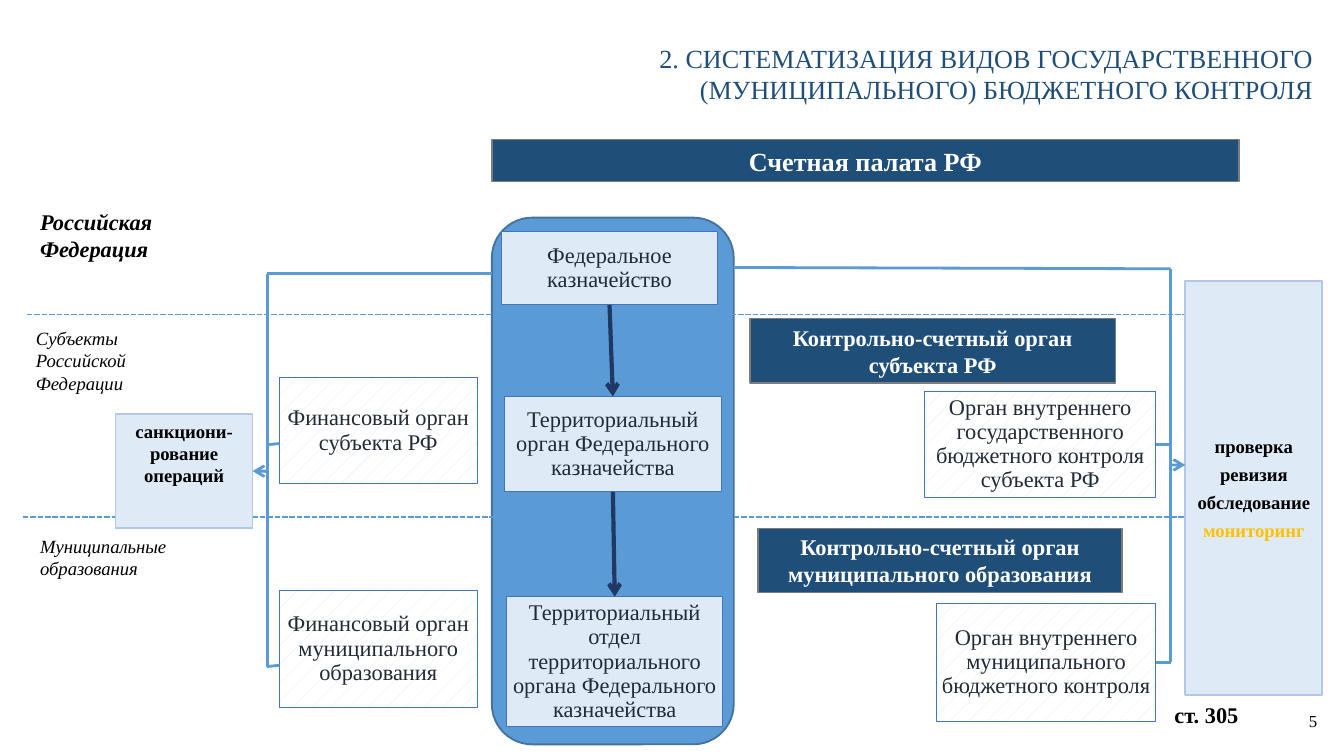
"""Build the slide on the kinds of state and municipal budget control."""
from pptx import Presentation
from pptx import util as u
from pptx.dml import color
from pptx.enum import dml, shapes, text
from pptx.oxml import ns
from lxml import etree

FONT = "Times New Roman"
NAVY, BLUE, PALE, DARK = "1F4E79", "5B9BD5", "DEEBF7", "203864"
TOP, LEFT, BOTTOM, RIGHT = 0, 1, 2, 3


def rgb(value):
    """Turn a hex string into a colour."""
    return color.RGBColor.from_string(value)


def write(sp, content, size=12, ink="000000", bold=False, italic=False, align="LEFT",
          anchor="TOP", inset=(7.2, 3.6), spacing=None, before=0, grow=False, accents=()):
    """Fill a shape with paragraphs, one per line of content."""
    tf = sp.text_frame
    tf.word_wrap = True
    tf.auto_size = getattr(text.MSO_AUTO_SIZE, "SHAPE_TO_FIT_TEXT" if grow else "NONE")
    tf.vertical_anchor = getattr(text.MSO_ANCHOR, anchor)
    tf.margin_left = tf.margin_right = u.Pt(inset[0])
    tf.margin_top = tf.margin_bottom = u.Pt(inset[1])
    for i, line in enumerate(content.split("\n")):
        p = tf.add_paragraph() if i else tf.paragraphs[0]
        p.alignment = getattr(text.PP_ALIGN, align)
        if spacing:
            p.line_spacing = spacing
        if i and before:
            p.space_before = u.Pt(before)
        r = p.add_run()
        r.text = line
        r.font.name, r.font.size = FONT, u.Pt(size)
        r.font.bold, r.font.italic = bold, italic
        r.font.color.rgb = rgb(dict(accents).get(line, ink))


def label(s, at, content, **fmt):
    """Add a text box."""
    write(s.shapes.add_textbox(*map(u.Pt, at)), content, **fmt)


def block(s, at, fill, edge, weight, kind="RECTANGLE", hatched=False):
    """Add a filled shape with an outline."""
    sp = s.shapes.add_shape(getattr(shapes.MSO_SHAPE, kind), *map(u.Pt, at))
    sp.shadow.inherit = False
    if hatched:
        sp.fill.patterned()
        sp.fill.pattern = dml.MSO_PATTERN.PERCENT_5
        sp.fill.fore_color.rgb, sp.fill.back_color.rgb = rgb(fill), rgb("FFFFFF")
    else:
        sp.fill.solid()
        sp.fill.fore_color.rgb = rgb(fill)
    sp.line.color.rgb, sp.line.width = rgb(edge), u.Pt(weight)
    return sp


def banner(s, at, content, size=12):
    """Add a dark bar naming an external control body."""
    sp = block(s, at, NAVY, "7C7C7C", 0.75)
    write(sp, content, size=size, ink="FFFFFF", bold=True, align="CENTER",
          inset=(5, 2.9), grow=True)


def body(s, at, content, hatched=False):
    """Add a box naming an internal control body."""
    sp = block(s, at, PALE, "4472C4", 0.5, hatched=hatched)
    write(sp, content, ink="222A35", align="CENTER", anchor="MIDDLE",
          inset=(0.7, 0.7), spacing=0.9)
    return sp


def methods(s, at, content, **fmt):
    """Add a panel listing control methods."""
    sp = block(s, at, PALE, "B4C7E7", 1)
    write(sp, content, size=10, bold=True, align="CENTER", inset=(5, 2.9), before=3, **fmt)
    return sp


def link(s, x1, y1, x2, y2, ink=BLUE, weight=1.5, dashed=False, arrow=False,
         begin=None, end=None):
    """Add a straight line, joined to shapes where begin or end is given."""
    cx = s.shapes.add_connector(shapes.MSO_CONNECTOR.STRAIGHT, *map(u.Pt, (x1, y1, x2, y2)))
    cx.line.color.rgb, cx.line.width = rgb(ink), u.Pt(weight)
    if dashed:
        cx.line.dash_style = dml.MSO_LINE.SQUARE_DOT
    if arrow:
        etree.SubElement(cx.line._get_or_add_ln(), ns.qn("a:tailEnd"), type="arrow")
    etree.SubElement(cx._element.spPr, ns.qn("a:effectLst"))
    if begin:
        cx.begin_connect(*begin)
    if end:
        cx.end_connect(*end)


def levels(s):
    """Add the names of the budget levels and the lines between them."""
    link(s, 14.4, 168.5, 704.9, 168.5, weight=1, dashed=True)
    link(s, 12.2, 277.2, 708.5, 277.2, weight=1, dashed=True)
    label(s, (14.4, 108, 106.6, 36), "Российская Федерация", bold=True, italic=True, grow=True)
    label(s, (12.2, 171.4, 106.6, 43.9), "Субъекты Российской Федерации",
          size=10, italic=True, grow=True)
    label(s, (14.4, 283, 106.6, 31.7), "Муниципальные образования",
          size=10, italic=True, grow=True)


def treasury(s):
    """Add the chain of treasury bodies."""
    chain = [body(s, at, content) for at, content in (
        ((268.6, 123.8, 115.9, 39.6), "Федеральное казначейство"),
        ((270.4, 212.4, 115.9, 51.1), "Территориальный орган Федерального казначейства"),
        ((271.4, 319.7, 115.9, 69.8),
         "Территориальный отдел территориального органа Федерального казначейства"))]
    for upper, lower in zip(chain, chain[1:]):
        link(s, 329, 163, 329, 212, ink=DARK, weight=2.25, arrow=True,
             begin=(upper, BOTTOM), end=(lower, TOP))


def right_side(s):
    """Add the control bodies and their methods on the right."""
    banner(s, (401.8, 170.6, 195.8, 34.6), "Контрольно-счетный орган\nсубъекта РФ")
    banner(s, (406.1, 283, 195.1, 34.6), "Контрольно-счетный орган\nмуниципального образования")
    bus = 627.1
    for at, content in (
            ((495.4, 209.5, 123.8, 56.9),
             "Орган внутреннего государственного бюджетного контроля субъекта РФ"),
            ((501.8, 323.3, 117.4, 63),
             "Орган внутреннего муниципального бюджетного контроля")):
        sp = body(s, at, content, hatched=True)
        y = at[1] + at[3] / 2
        link(s, bus, y, 619.2, y, end=(sp, RIGHT))
    link(s, bus, 144, 393.1, 143.3)
    link(s, bus, 354.6, bus, 144)
    methods(s, (635, 150.5, 73.4, 221.8), "проверка\nревизия\nобследование\nмониторинг",
            anchor="MIDDLE", accents={"мониторинг": "FFC000"})
    link(s, bus, 249.1, 635, 249.1, arrow=True)


def left_side(s):
    """Add the financial bodies and their method on the left."""
    bus = 143.1
    panel = methods(s, (61.9, 221.8, 73.4, 61.2), "санкциони-рование операций")
    for at, content, y in (
            ((149.8, 202.3, 105.8, 56.9), "Финансовый орган субъекта РФ", 237.6),
            ((149.8, 316.1, 105.8, 63), "Финансовый орган муниципального образования", 356.4)):
        body(s, at, content, hatched=True)
        link(s, 149.8, y, bus, y + 0.7)
    link(s, 263.5, 146.4, bus, 146.4)
    link(s, bus, 357.1, bus, 146.9)
    link(s, bus, 252.4, 135.3, 252.4, arrow=True, end=(panel, RIGHT))


def main():
    """Build and save the presentation."""
    prs = Presentation()
    prs.slide_width, prs.slide_height = u.Pt(720), u.Pt(405)
    s = prs.slides.add_slide(prs.slide_layouts[6])
    block(s, (263.5, 116.6, 129.6, 282.2), BLUE, "43739E", 1, kind="ROUNDED_RECTANGLE")
    label(s, (245.5, 20.2, 463, 38.2),
          "2. СИСТЕМАТИЗАЦИЯ ВИДОВ ГОСУДАРСТВЕННОГО (МУНИЦИПАЛЬНОГО) БЮДЖЕТНОГО КОНТРОЛЯ",
          size=14, ink=NAVY, align="RIGHT", anchor="MIDDLE", inset=(5, 2.9))
    levels(s)
    banner(s, (263.5, 74.9, 400.3, 22.3), "Счетная палата РФ", size=14)
    treasury(s)
    right_side(s)
    left_side(s)
    label(s, (622.1, 372.2, 53.3, 21.6), "ст. 305", bold=True, grow=True)
    label(s, (686.9, 375.1, 23.8, 21.6), "5", size=9, align="RIGHT",
          anchor="MIDDLE", inset=(5, 2.9))
    prs.save("out.pptx")


if __name__ == "__main__":
    main()
